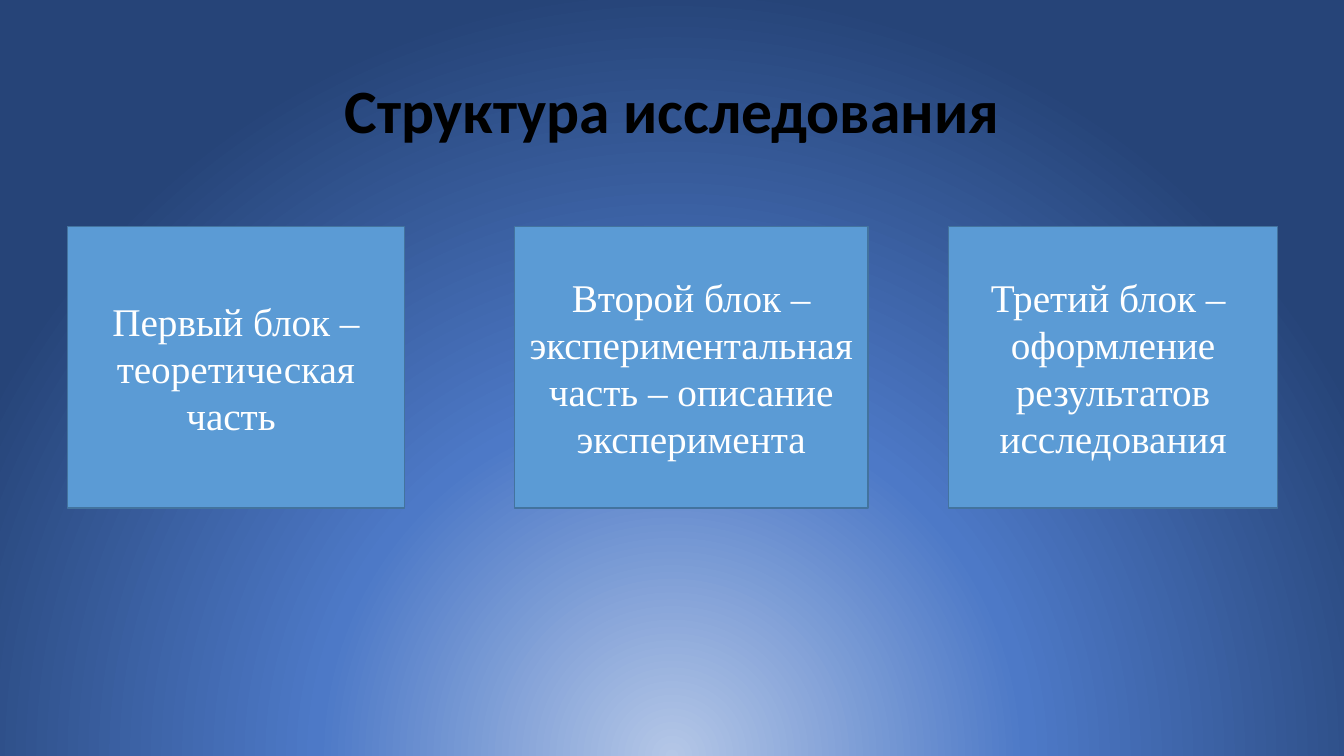
import lxml.etree
import pptx
import pptx.dml.color
import pptx.enum.shapes
import pptx.enum.text
import pptx.oxml
import pptx.util

Inches = pptx.util.Inches
BLOCK_TOP, BLOCK_HEIGHT = 2.25, 2.79
BLOCKS = [  # left, width, paragraphs
    (0.67, 3.34, ["Первый блок – теоретическая часть "]),
    (5.1, 3.51, ["Второй блок – экспериментальная часть – описание эксперимента"]),
    (9.41, 3.26, ["Третий блок – ", "оформление результатов исследования"]),
]
GRADIENT = [(0, "B4C7E7"), (46, "4D79C7"), (100, "264478")]


def color(value):
    return pptx.dml.color.RGBColor.from_string(value)


def set_background(s):
    """Fill the slide with a radial gradient centred below its bottom edge."""
    stops = "".join(
        f'<a:gs pos="{pos * 1000}"><a:srgbClr val="{value}"/></a:gs>'
        for pos, value in GRADIENT
    )
    bg = pptx.oxml.parse_xml(
        '<p:bg xmlns:p="http://schemas.openxmlformats.org/presentationml/2006/main"'
        ' xmlns:a="http://schemas.openxmlformats.org/drawingml/2006/main"><p:bgPr>'
        f'<a:gradFill rotWithShape="1"><a:gsLst>{stops}</a:gsLst><a:path path="circle">'
        '<a:fillToRect l="50000" t="130000" r="50000" b="-30000"/></a:path></a:gradFill>'
        "<a:effectLst/></p:bgPr></p:bg>"
    )
    s.element.cSld.insert(0, bg)


def write(shape, paragraphs, font, font_color, line_spacing=1.0):
    """Set centred paragraphs in the shape with one font format."""
    tf = shape.text_frame
    tf.word_wrap = True
    tf.vertical_anchor = pptx.enum.text.MSO_ANCHOR.MIDDLE
    for i, text in enumerate(paragraphs):
        p = tf.paragraphs[0] if i == 0 else tf.add_paragraph()
        p.alignment = pptx.enum.text.PP_ALIGN.CENTER
        p.line_spacing = line_spacing
        r = p.add_run()
        r.text = text
        for name, value in font.items():
            setattr(r.font, name, value)
        r.font.color.rgb = color(font_color)


def add_title(s, left, top, width, height, text):
    box = s.shapes.add_textbox(*map(Inches, (left, top, width, height)))
    font = {"name": "Calibri", "size": pptx.util.Pt(44), "bold": True}
    write(box, [text], font, "000000", line_spacing=0.9)


def add_block(s, left, top, width, height, paragraphs):
    sp = s.shapes.add_shape(
        pptx.enum.shapes.MSO_SHAPE.RECTANGLE, *map(Inches, (left, top, width, height))
    )
    sp.shadow.inherit = False
    sp.fill.solid()
    sp.fill.fore_color.rgb = color("5B9BD5")
    sp.line.color.rgb = color("43739E")
    sp.line.width = pptx.util.Pt(1)
    font = {"name": "Times New Roman", "size": pptx.util.Pt(28)}
    write(sp, paragraphs, font, "FFFFFF")


def main():
    prs = pptx.Presentation()
    prs.slide_width, prs.slide_height = Inches(13.33), Inches(7.5)
    s = prs.slides.add_slide(prs.slide_layouts[6])
    set_background(s)
    add_title(s, 0.92, 0.4, 11.5, 1.45, "Структура исследования")
    for left, width, paragraphs in BLOCKS:
        add_block(s, left, BLOCK_TOP, width, BLOCK_HEIGHT, paragraphs)
    prs.save("out.pptx")


if __name__ == "__main__":
    main()
